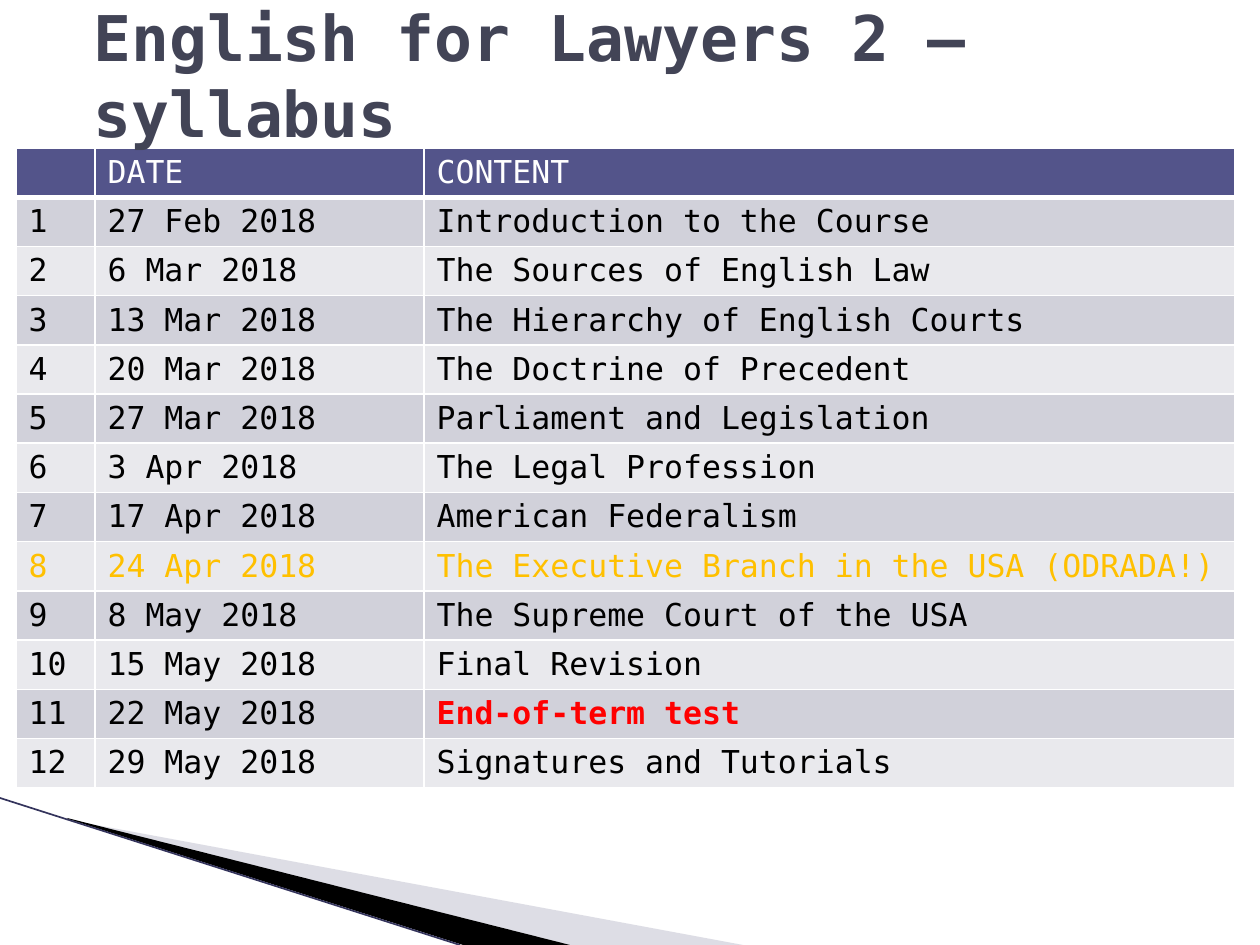
from typing import NamedTuple

from lxml.etree import SubElement
from pptx import Presentation
from pptx.dml.color import RGBColor
from pptx.enum.shapes import MSO_CONNECTOR as CONN
from pptx.enum.text import MSO_ANCHOR as ANCHOR
from pptx.oxml import parse_xml
from pptx.oxml.ns import nsdecls, qn
from pptx.util import Pt

PX = 914400 / 126
FONT = "DejaVu Sans Mono"
WHITE, BLACK, GOLD, RED = "FFFFFF", "000000", "FFC000", "FF0000"
HEADER, BANDS = "53548A", ("E9E9ED", "D1D1DA")


class Wedge(NamedTuple):
    points: list[tuple[int, int]]
    color: str
    alpha: int = 100


class Lesson(NamedTuple):
    date: str
    content: str
    color: str = BLACK
    content_color: str = ""
    bold: bool = False


WEDGES = [
    Wedge([(69, 820), (743, 945), (570, 945), (69, 819)], "AAAABF", 40),
    Wedge([(67, 818), (570, 945), (463, 945), (68, 819)], BLACK),
]
LESSONS = [
    Lesson("27 Feb 2018", "Introduction to the Course"),
    Lesson("6 Mar 2018", "The Sources of English Law"),
    Lesson("13 Mar 2018", "The Hierarchy of English Courts"),
    Lesson("20 Mar 2018", "The Doctrine of Precedent"),
    Lesson("27 Mar 2018", "Parliament and Legislation"),
    Lesson("3 Apr 2018", "The Legal Profession"),
    Lesson("17 Apr 2018", "American Federalism"),
    Lesson("24 Apr 2018", "The Executive Branch in the USA (ODRADA!)", GOLD),
    Lesson("8 May 2018", "The Supreme Court of the USA"),
    Lesson("15 May 2018", "Final Revision"),
    Lesson("22 May 2018", "End-of-term test", content_color=RED, bold=True),
    Lesson("29 May 2018", "Signatures and Tutorials"),
]
COLUMNS = (79, 329, 811)
ROW_HEIGHT = 49


def px(n: int) -> int:
    return round(n * PX)


def rgb(color: str) -> RGBColor:
    return RGBColor.from_string(color)


def write(tf, text: str, size: int, color: str, bold: bool = False) -> None:
    p = tf.paragraphs[0]
    p.text = text
    p.font.name, p.font.size, p.font.bold = FONT, Pt(size), bold
    p.font.color.rgb = rgb(color)


def draw_wedge(s, wedge: Wedge) -> None:
    builder = s.shapes.build_freeform(*wedge.points[0], scale=PX)
    builder.add_line_segments(wedge.points[1:], close=True)
    sp = builder.convert_to_shape()
    sp.shadow.inherit = False
    sp.fill.solid()
    sp.fill.fore_color.rgb = rgb(wedge.color)
    sp.line.fill.background()
    if wedge.alpha < 100:
        clr = sp.fill._xPr.find(".//" + qn("a:srgbClr"))
        SubElement(clr, qn("a:alpha"), val=str(wedge.alpha * 1000))


def draw_edge(s) -> None:
    line = s.shapes.add_connector(CONN.STRAIGHT, 0, px(798), px(460), px(945))
    line.line.color.rgb = rgb("34345C")
    line.line.width = Pt(0.95)
    SubElement(line._element.spPr, qn("a:effectLst"))


def fill_cell(cell, text: str, fill: str, color: str, bold: bool, bottom: int) -> None:
    cell.fill.solid()
    cell.fill.fore_color.rgb = rgb(fill)
    write(cell.text_frame, text, 18, color, bold)
    # Borders go before the fill
    tc_pr = cell._tc.get_or_add_tcPr()
    for i, (side, width) in enumerate({"L": 1, "R": 1, "T": 1, "B": bottom}.items()):
        tc_pr.insert(i, parse_xml(
            f'<a:ln{side} {nsdecls("a")} w="{Pt(width)}"><a:solidFill>'
            f'<a:srgbClr val="{WHITE}"/></a:solidFill></a:ln{side}>'))


def draw_syllabus(s) -> None:
    count = len(LESSONS) + 1
    table = s.shapes.add_table(count, len(COLUMNS), px(16), px(148),
                               px(sum(COLUMNS)), px(ROW_HEIGHT * count)).table
    for column, width in zip(table.columns, COLUMNS):
        column.width = px(width)
    for row in table.rows:
        row.height = px(ROW_HEIGHT)
    for c, text in enumerate(("", "DATE", "CONTENT")):
        fill_cell(table.cell(0, c), text, HEADER, WHITE, False, 3)
    for n, lesson in enumerate(LESSONS, 1):
        for c, text in enumerate((str(n), lesson.date, lesson.content)):
            is_content = c == 2
            color = is_content and lesson.content_color or lesson.color
            fill_cell(table.cell(n, c), text, BANDS[n % 2], color,
                      is_content and lesson.bold, 1)


def draw_title(s) -> None:
    tf = s.shapes.add_textbox(px(81), px(1), px(1134), px(147)).text_frame
    tf.word_wrap = True
    tf.vertical_anchor = ANCHOR.MIDDLE
    write(tf, "English for Lawyers 2 – syllabus", 36, "424456", True)


def main() -> None:
    prs = Presentation()
    prs.slide_width, prs.slide_height = px(1260), px(945)
    s = prs.slides.add_slide(prs.slide_layouts[6])
    # Corner decoration
    for wedge in WEDGES:
        draw_wedge(s, wedge)
    draw_edge(s)
    # Syllabus, with the title in front
    draw_syllabus(s)
    draw_title(s)
    prs.save("out.pptx")


if __name__ == "__main__":
    main()
